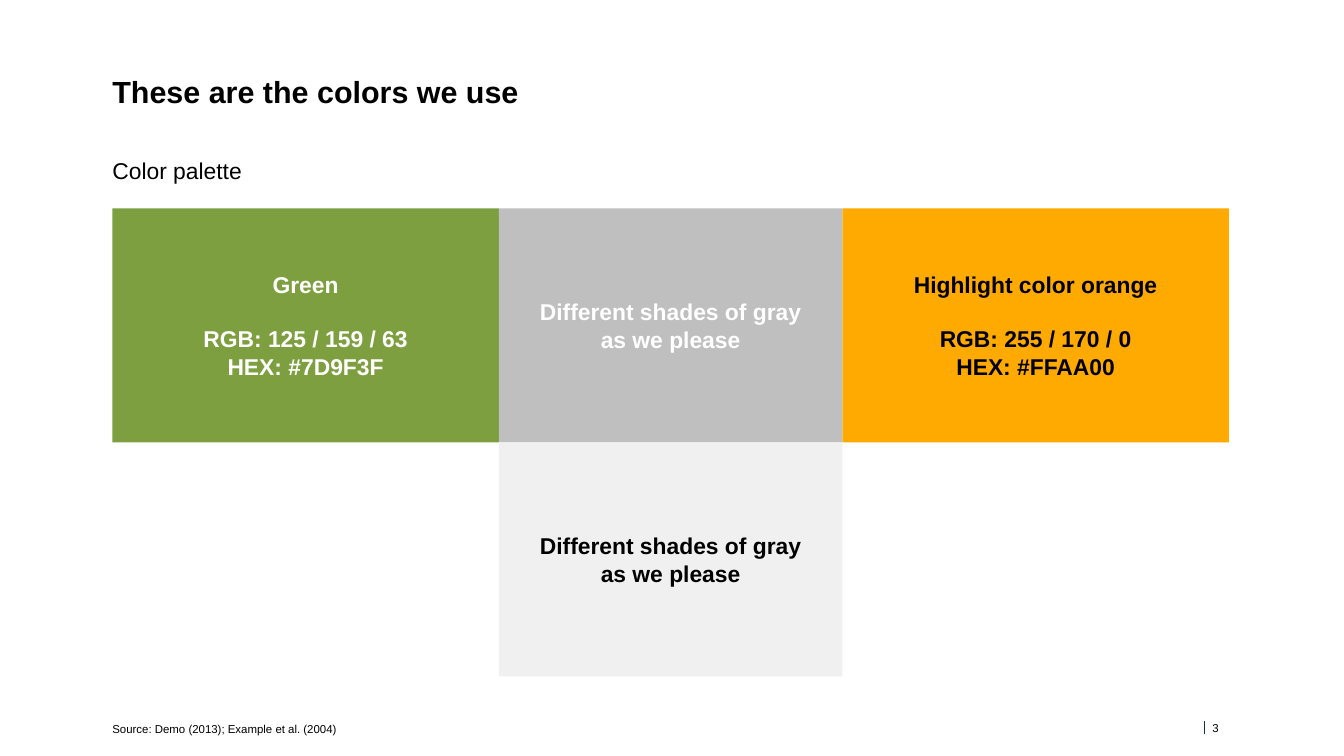
"""Build the color palette slide."""
from lxml import etree
from pptx import Presentation
from pptx.dml.color import RGBColor
from pptx.enum.shapes import MSO_CONNECTOR, MSO_SHAPE
from pptx.enum.text import MSO_ANCHOR, PP_ALIGN
from pptx.oxml.ns import qn
from pptx.util import Inches, Pt

RECT = MSO_SHAPE.RECTANGLE
LINE = MSO_CONNECTOR.STRAIGHT
TOP, MID, LOW = MSO_ANCHOR.TOP, MSO_ANCHOR.MIDDLE, MSO_ANCHOR.BOTTOM
LEFT, CENTER = PP_ALIGN.LEFT, PP_ALIGN.CENTER

THEME = {
    "font": "Arial",
    "black": "000000", "white": "FFFFFF", "rule": "172F37",
    "green": "7D9F3F", "orange": "FFAA00", "gray": "BFBFBF", "pale": "F0F0F0",
    "title": 24, "body": 18, "small": 9, "gap": 21,
}

TITLE = "These are the colors we use"
LEAD = "Color palette"
SOURCE = "Source: Demo (2013); Example et al. (2004)"
PAGE = "3"
SHADES = ["Different shades of gray\nas we please"]
TILES = [
    (0, 0, "green", "white", ["Green", "RGB: 125 / 159 / 63\nHEX: #7D9F3F"]),
    (0, 2, "orange", "black",
     ["Highlight color orange", "RGB: 255 / 170 / 0\nHEX: #FFAA00"]),
    (0, 1, "gray", "white", SHADES),
    (1, 1, "pale", "black", SHADES),
]

EDGE, START = 1.23, 2.28
WIDTHS, HEIGHT = [4.23, 3.76, 4.23], 2.56


def write(shape, texts, size="body", color="black", bold=False,
          align=LEFT, anchor=TOP, line=None):
    frame = shape.text_frame
    frame.word_wrap = True
    frame.vertical_anchor = anchor
    frame.margin_left = frame.margin_right = 0
    frame.margin_top = frame.margin_bottom = 0
    for i, text in enumerate(texts):
        para = frame.paragraphs[0] if i == 0 else frame.add_paragraph()
        para.text = text
        para.alignment = align
        if i:
            para.space_before = Pt(THEME["gap"])
        if line:
            para.line_spacing = Pt(line)
        for run in para.runs:
            run.font.name = THEME["font"]
            run.font.size = Pt(THEME[size])
            run.font.bold = bold
            run.font.color.rgb = RGBColor.from_string(THEME[color])


def label(slide, text, box, **style):
    write(slide.shapes.add_textbox(*map(Inches, box)), [text], **style)


def tile(slide, row, col, fill, color, texts):
    box = (EDGE + sum(WIDTHS[:col]), START + row * HEIGHT, WIDTHS[col], HEIGHT)
    shape = slide.shapes.add_shape(RECT, *map(Inches, box))
    shape.shadow.inherit = False
    shape.fill.solid()
    shape.fill.fore_color.rgb = RGBColor.from_string(THEME[fill])
    shape.line.fill.background()
    write(shape, texts, color=color, bold=True, align=CENTER, anchor=MID)


def rule(slide, x, top, end):
    line = slide.shapes.add_connector(LINE, *map(Inches, (x, top, x, end)))
    line.line.color.rgb = RGBColor.from_string(THEME["rule"])
    line.line.width = Pt(0.75)
    etree.SubElement(line._element.spPr, qn("a:effectLst"))


def main():
    deck = Presentation()
    deck.slide_width, deck.slide_height = Inches(14.71), Inches(8.27)
    slide = deck.slides.add_slide(deck.slide_layouts[6])
    wide = sum(WIDTHS)
    rule(slide, 13.18, 7.89, 8.03)
    label(slide, TITLE, (EDGE, 0.87, wide, 0.67),
          size="title", bold=True, line=24)
    label(slide, LEAD, (EDGE, 1.76, wide, 0.3), line=18)
    label(slide, PAGE, (13.27, 7.87, 0.54, 0.15), size="small", line=12)
    label(slide, SOURCE, (EDGE, 7.83, 11.56, 0.22),
          size="small", anchor=LOW, line=18)
    for item in TILES:
        tile(slide, *item)
    deck.save("out.pptx")


if __name__ == "__main__":
    main()
